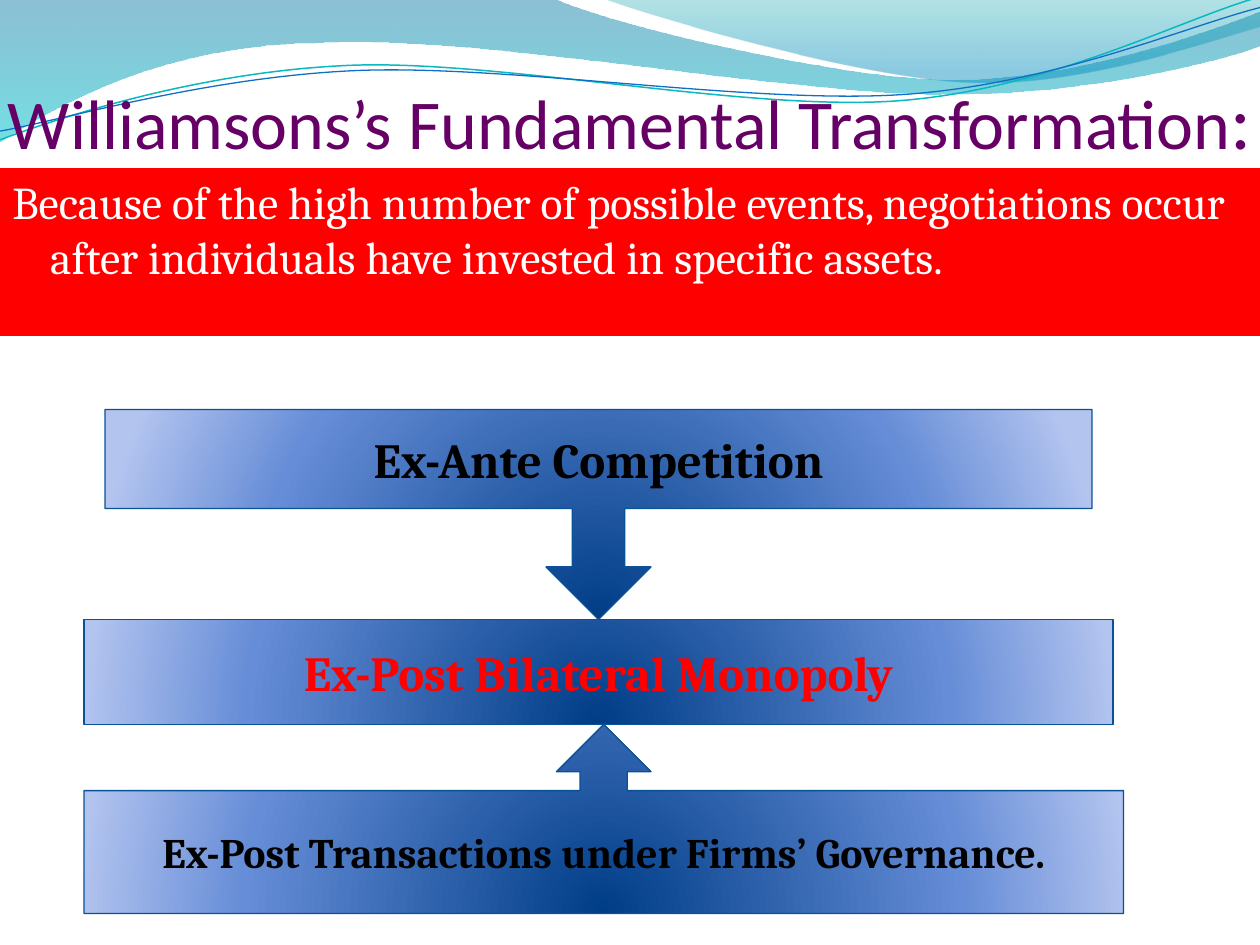
from lxml import etree
from pptx import Presentation
from pptx import util as u
from pptx.dml.color import RGBColor
from pptx.enum import shapes, text
from pptx.oxml.ns import qn

COLORS = {
    "title": "660066", "banner": "FF0000", "white": "FFFFFF", "black": "000000",
    "outline": "095295", "deep": "003D87", "mid": "668DD7", "pale": "B3C4EF",
    "teal_line": "0AB8BF", "blue_line": "0F6FC6", "ocean": "0074A1",
    "cyan": "00C6CF", "teal": "00A1A9", "sky": "008BBF",
}
TITLE = [("Williamsons’s Fundamental Transformation", 40), (":", 45)]
CLAIM = [("Because of the high number of possible events, negotiations occur "
          "after individuals have invested in specific assets.", 26)]

STAGES = [
    ("Ex-Ante Competition", 28, "black", shapes.MSO_SHAPE.DOWN_ARROW_CALLOUT,
     (60, 234, 564, 120), (0.25, 0.25, 0.25, 0.472)),
    ("Ex-Post Bilateral Monopoly", 28, "banner", shapes.MSO_SHAPE.RECTANGLE,
     (48, 354, 588, 60), ()),
    ("Ex-Post Transactions under Firms’ Governance.", 24, "black",
     shapes.MSO_SHAPE.UP_ARROW_CALLOUT, (48, 414, 594, 108), ()),
]
STAGE_STOPS = [(0, "deep", 100), (68, "mid", 100), (100, "pale", 100)]

WAVES = [
    ([(0, -0.7), (316.8, -0.7), (342.7, 12.2, 478.1, 45.4, 545.8, 45.4),
      (614.2, 45.4, 689.8, 18.7, 720, 6.5), (720.7, 25.9),
      (707.8, 31.7, 626.4, 54.7, 537.1, 54), (447.8, 54, 275, 20.2, 185, 24.5),
      (92.9, 25.2, 33.1, 59.8, -0.7, 81.4), (0, -0.7)],
     [(0, "ocean", 45), (100, "cyan", 55)]),
    ([(344.9, -0.7), (366.5, 7.9, 491, 44.6, 553.7, 46.8),
      (616.3, 49.7, 691.9, 23, 720, 15.1), (720, 0), (344.9, -0.7)],
     [(0, "teal", 30), (80, "sky", 45)]),
]
RIPPLES = [
    ([(0, 79.9), (34.6, 67, 113.8, 41, 199.4, 37.4),
      (284.4, 33.8, 427, 64.1, 513.4, 57.6),
      (599.8, 51.1, 675.4, 10.8, 718.6, -1.4)], "teal_line", 0.85),
    ([(0, 74.9), (33.8, 69.1, 118.1, 43.9, 203.8, 40.3),
      (290.2, 36.7, 429.8, 59.8, 516.2, 54),
      (601.9, 48.2, 677.5, 15.1, 720, 4.3)], "blue_line", 0.75),
]


def rgb(name):
    return RGBColor.from_string(COLORS[name])


def draw_path(slide, steps, close):
    points = [(u.Pt(step[i]), u.Pt(step[i + 1]))
              for step in steps for i in range(0, len(step), 2)]
    builder = slide.shapes.build_freeform(*points[0], scale=1.0)
    builder.add_line_segments(points[1:], close=close)
    outline = builder.convert_to_shape()
    outline.shadow.inherit = False
    segments = iter(list(outline.element.spPr.iter(qn("a:lnTo"))))
    for step in steps[1:]:
        first = next(segments)
        if len(step) == 6:
            first.tag = qn("a:cubicBezTo")
            for segment in (next(segments), next(segments)):
                first.append(segment[0])
                segment.getparent().remove(segment)
    return outline


def fill_gradient(shape, stops, radial=False):
    shape.fill.gradient()
    gradient = shape.element.spPr.find(qn("a:gradFill"))
    for child in list(gradient):
        gradient.remove(child)
    stop_list = etree.SubElement(gradient, qn("a:gsLst"))
    for position, name, opacity in stops:
        stop = etree.SubElement(stop_list, qn("a:gs"), pos=str(position * 1000))
        color = etree.SubElement(stop, qn("a:srgbClr"), val=COLORS[name])
        if opacity < 100:
            etree.SubElement(color, qn("a:alpha"), val=str(opacity * 1000))
    if radial:
        center = etree.SubElement(gradient, qn("a:path"), path="circle")
        etree.SubElement(center, qn("a:fillToRect"),
                         l="50000", t="130000", r="50000", b="-30000")
    else:
        etree.SubElement(gradient, qn("a:lin"), ang="5400000", scaled="1")


def write(shape, runs, color, font="Cambria", bold=False, align="CENTER",
          anchor="MIDDLE", insets=(7.2, 3.6, 7.2, 3.6), hanging=0, before=0):
    frame = shape.text_frame
    frame.word_wrap = True
    frame.vertical_anchor = getattr(text.MSO_ANCHOR, anchor)
    (frame.margin_left, frame.margin_top,
     frame.margin_right, frame.margin_bottom) = map(u.Pt, insets)
    paragraph = frame.paragraphs[0]
    paragraph.alignment = getattr(text.PP_ALIGN, align)
    paragraph.space_before = u.Pt(before)
    if hanging:
        properties = paragraph._p.get_or_add_pPr()
        properties.set("marL", str(u.Pt(hanging)))
        properties.set("indent", str(-u.Pt(hanging)))
    for words, size in runs:
        run = paragraph.add_run()
        run.text = words
        run.font.size, run.font.name, run.font.bold = u.Pt(size), font, bold
        run.font.color.rgb = rgb(color)


def add_block(slide, kind, box):
    block = slide.shapes.add_shape(kind, *map(u.Pt, box))
    block.shadow.inherit = False
    return block


def main():
    deck = Presentation()
    deck.slide_width, deck.slide_height = u.Pt(720), u.Pt(540)
    slide = deck.slides.add_slide(deck.slide_layouts[6])

    for steps, stops in WAVES:
        wave = draw_path(slide, steps, close=True)
        fill_gradient(wave, stops)
        wave.line.fill.background()
    for steps, color, width in RIPPLES:
        ripple = draw_path(slide, steps, close=False)
        ripple.fill.background()
        ripple.line.color.rgb = rgb(color)
        ripple.line.width = u.Pt(width)

    title = slide.shapes.add_textbox(*map(u.Pt, (0, 18, 720, 76.3)))
    write(title, TITLE, "title", font="Calibri", anchor="BOTTOM", insets=(0, 3.6, 0, 0))

    claim = add_block(slide, shapes.MSO_SHAPE.RECTANGLE, (0, 96, 720, 96))
    claim.fill.solid()
    claim.fill.fore_color.rgb = rgb("banner")
    claim.line.fill.background()
    write(claim, CLAIM, "white", align="LEFT", anchor="TOP", hanging=21.6, before=5.2)

    for words, size, color, kind, box, adjustments in STAGES:
        stage = add_block(slide, kind, box)
        for i, value in enumerate(adjustments):
            stage.adjustments[i] = value
        fill_gradient(stage, STAGE_STOPS, radial=True)
        stage.line.color.rgb = rgb("outline")
        stage.line.width = u.Pt(0.75)
        write(stage, [(words, size)], color, bold=True)

    deck.save("out.pptx")


if __name__ == "__main__":
    main()
